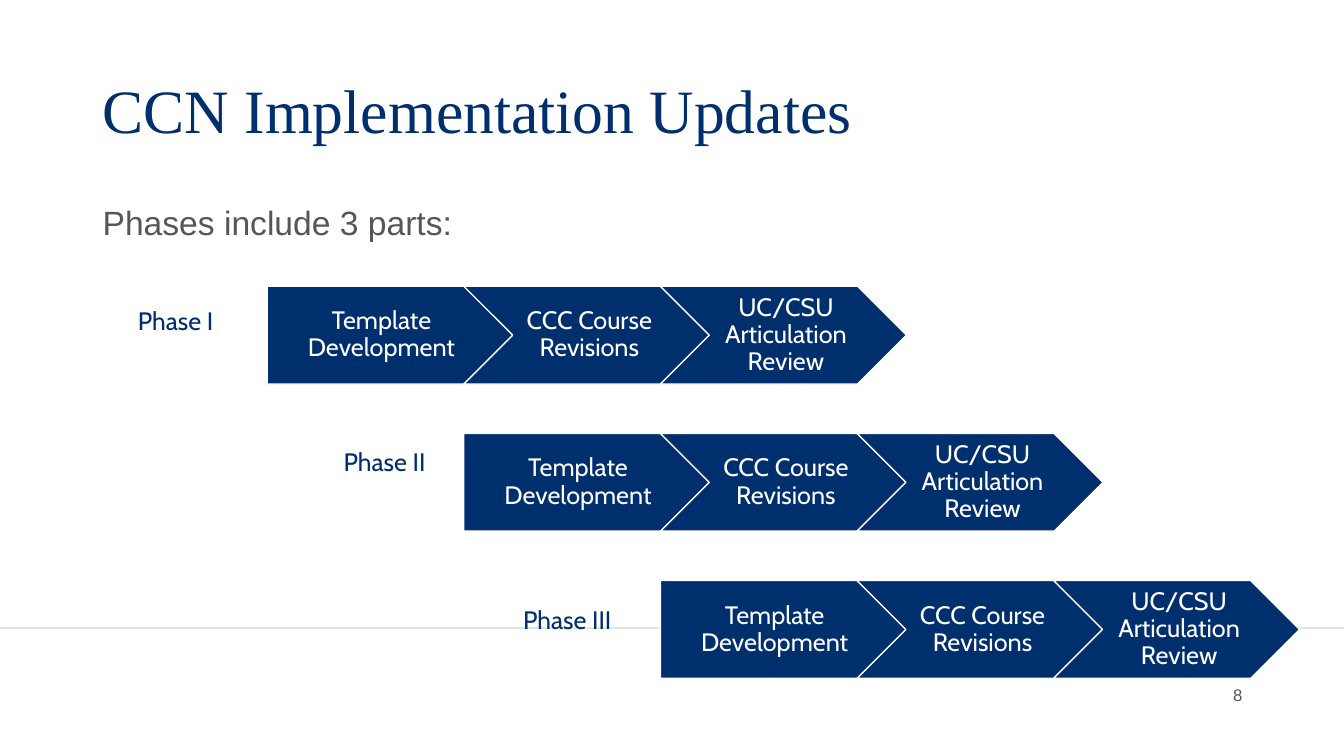
from pptx import Presentation
from pptx.dml.color import RGBColor
from pptx.enum.shapes import MSO_CONNECTOR, MSO_SHAPE
from pptx.enum.text import MSO_ANCHOR, PP_ALIGN
from pptx.oxml.ns import qn
from pptx.util import Inches, Pt
from lxml import etree

NAVY = RGBColor(0x00, 0x2F, 0x6D)
GRAY = RGBColor(0x53, 0x57, 0x5A)
RULE_GRAY = RGBColor(0xE3, 0xE5, 0xE5)
WHITE = RGBColor(0xFF, 0xFF, 0xFF)
STRAIGHT = MSO_CONNECTOR.STRAIGHT
PENTAGON = MSO_SHAPE.PENTAGON
CHEVRON = MSO_SHAPE.CHEVRON
TOP = MSO_ANCHOR.TOP
MIDDLE = MSO_ANCHOR.MIDDLE
LEFT = PP_ALIGN.LEFT
CENTER = PP_ALIGN.CENTER
RIGHT = PP_ALIGN.RIGHT

PARTS = ["Template Development", "CCC Course Revisions", "UC/CSU Articulation Review"]
PHASES = [
    ("Phase I", 1.27, 2.98, 1.06),
    ("Phase II", 3.31, 4.38, 1.13),
    ("Phase III", 5.09, 5.95, 1.2),
]
CHAIN_LEFT, CHAIN_TOP = 2.65, 2.84
PART_STEP, PHASE_STEP = 1.95, 1.46
PART_WIDTH, PART_HEIGHT = 2.44, 0.97


def write_text(shape, text, size, font_name, color, align=LEFT, anchor=TOP, spacing=1.0):
    """Put one formatted paragraph into a shape."""
    frame = shape.text_frame
    frame.text = text
    frame.word_wrap = True
    frame.vertical_anchor = anchor
    paragraph = frame.paragraphs[0]
    paragraph.alignment = align
    paragraph.line_spacing = spacing
    font = paragraph.runs[0].font
    font.size = Pt(size)
    font.name = font_name
    font.color.rgb = color


def add_text(slide, box, text, size, font_name, color, **layout):
    """Add a text box and return it."""
    shape = slide.shapes.add_textbox(*(Inches(length) for length in box))
    write_text(shape, text, size, font_name, color, **layout)
    return shape


def add_rule(slide, top):
    """Draw a thin line across the slide."""
    rule = slide.shapes.add_connector(STRAIGHT, 0, Inches(top), Inches(13.33), Inches(top))
    rule.line.color.rgb = RULE_GRAY
    rule.line.width = Pt(1)
    etree.SubElement(rule._element.spPr, qn("a:effectLst"))


def add_part(slide, kind, left, top, text):
    """Add one arrow-shaped part of a phase."""
    part = slide.shapes.add_shape(
        kind, Inches(left), Inches(top), Inches(PART_WIDTH), Inches(PART_HEIGHT)
    )
    part.shadow.inherit = False
    part.fill.solid()
    part.fill.fore_color.rgb = NAVY
    part.line.color.rgb = WHITE
    part.line.width = Pt(1)
    write_text(part, text, 18, "Cabin", WHITE, align=CENTER, anchor=MIDDLE, spacing=0.9)
    part.text_frame.margin_left = Inches(0.1 if kind == PENTAGON else 0.08)
    part.text_frame.margin_right = Inches(0.03)


def add_phase(slide, index, name, label_left, label_top, label_width):
    """Add a phase label and its chain of parts, one step further right per phase."""
    label_box = (label_left, label_top, label_width, 0.4)
    label = add_text(slide, label_box, name, 18, "Cabin", NAVY)
    label.text_frame.word_wrap = False
    for position, text in enumerate(PARTS):
        kind = CHEVRON if position else PENTAGON
        left = CHAIN_LEFT + (index + position) * PART_STEP
        add_part(slide, kind, left, CHAIN_TOP + index * PHASE_STEP, text)


def main():
    """Build the slide and save it."""
    presentation = Presentation()
    presentation.slide_width = Inches(13.33)
    presentation.slide_height = Inches(7.5)
    slide = presentation.slides.add_slide(presentation.slide_layouts[6])
    add_rule(slide, 6.23)
    add_text(slide, (0.92, 0.4, 11.5, 1.45), "CCN Implementation Updates",
             44, "Times New Roman", NAVY, anchor=MIDDLE, spacing=0.9)
    add_text(slide, (0.92, 2, 11.5, 4), "Phases include 3 parts:",
             24, "Arial", GRAY, spacing=0.9)
    add_text(slide, (9.42, 6.69, 3, 0.4), "8", 12, "Arial", GRAY, align=RIGHT, anchor=MIDDLE)
    for index, phase in enumerate(PHASES):
        add_phase(slide, index, *phase)
    presentation.save("out.pptx")


if __name__ == "__main__":
    main()
